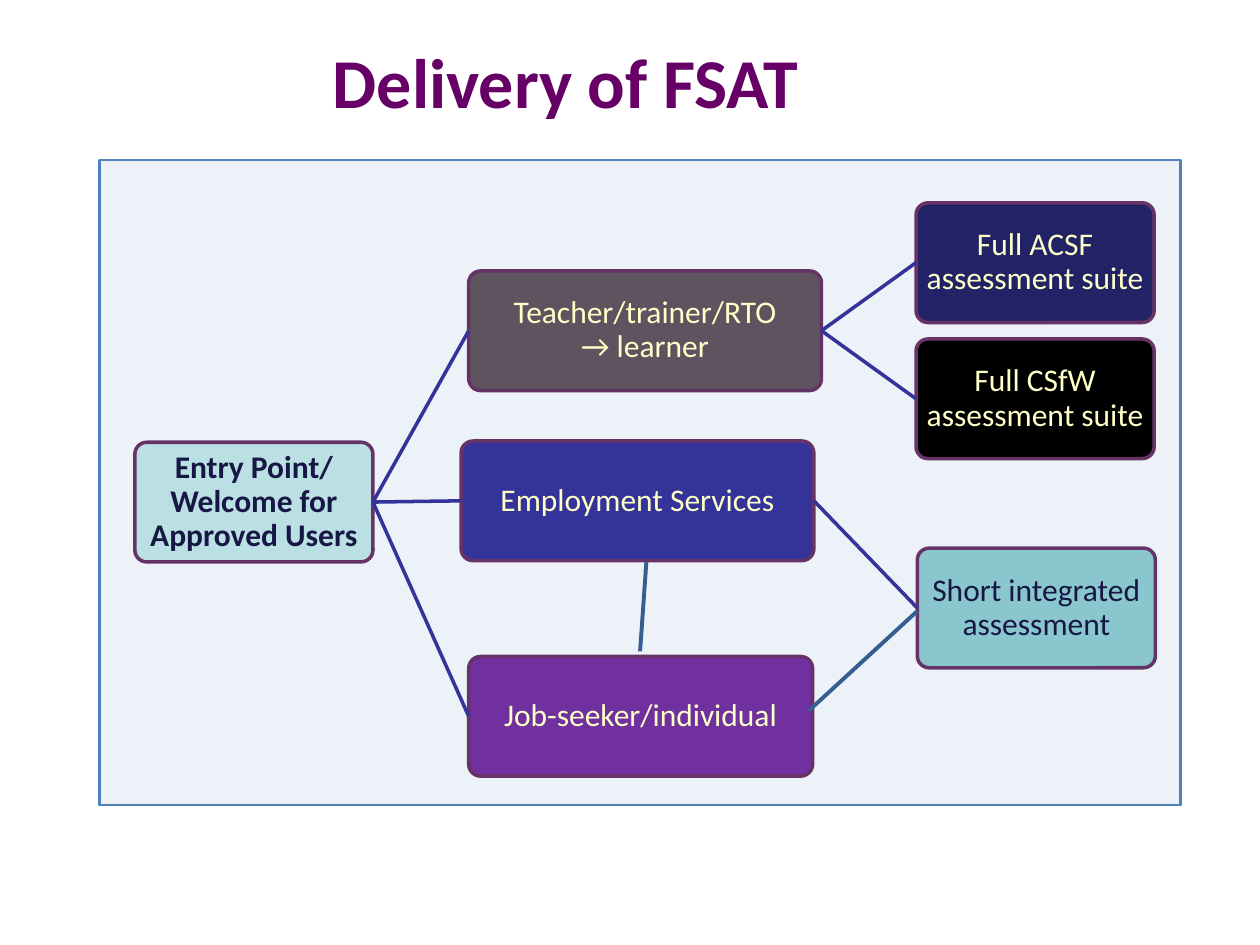
"""Build the FSAT delivery flow slide."""
from dataclasses import dataclass

from lxml import etree
from pptx import Presentation
from pptx.dml.color import RGBColor
from pptx.enum import shapes, text
from pptx.oxml import ns
from pptx.util import Inches, Pt


@dataclass(frozen=True)
class Theme:
    font: str = "Calibri"
    title_size: float = 40
    node_size: float = 18
    title: str = "660066"
    panel: str = "DBE5F1"
    panel_alpha: int = 49
    panel_line: str = "4F81BD"
    node_line: str = "663366"
    link: str = "333399"
    side_link: str = "365F91"
    dark: str = "171745"
    light: str = "FFFFC9"


@dataclass(frozen=True)
class Node:
    label: str
    left: float
    top: float
    width: float
    fill: str
    color: str
    bold: bool = False


THEME = Theme()
NODE_HEIGHT = 0.95
LEFT_SITE, RIGHT_SITE = 1, 3
NODES = {
    "entry": Node("Entry Point/ Welcome for Approved Users", 1.07, 3.51, 1.89, "BBE0E3", THEME.dark, True),
    "teacher": Node("Teacher/trainer/RTO\v→ learner", 3.72, 2.15, 2.8, "605360", THEME.light),
    "acsf": Node("Full ACSF assessment suite", 7.27, 1.61, 1.89, "222267", THEME.light),
    "csfw": Node("Full CSfW assessment suite", 7.27, 2.69, 1.89, "000000", THEME.light),
    "employment": Node("Employment Services", 3.66, 3.5, 2.8, "333399", THEME.light),
    "short": Node("Short integrated assessment", 7.28, 4.35, 1.89, "8AC6CD", THEME.dark),
    "seeker": Node("Job-seeker/individual", 3.72, 5.21, 2.73, "7030A0", THEME.light),
}
LINKS = [
    ("entry", "teacher"), ("entry", "employment"), ("entry", "seeker"),
    ("teacher", "acsf"), ("teacher", "csfw"), ("employment", "short"),
]
SIDE_LINKS = [((6.42, 5.64), (7.28, 4.85)), ((5.08, 5.17), (5.13, 4.46))]


def write(sp, content: str, *, size: float, color: str, bold: bool = False,
          inset: float = 0.04, spacing: float = 1.0) -> None:
    """Put centred, formatted text into a shape."""
    tf = sp.text_frame
    tf.word_wrap = True
    tf.auto_size = text.MSO_AUTO_SIZE.NONE
    tf.vertical_anchor = text.MSO_ANCHOR.MIDDLE
    tf.margin_left = tf.margin_right = tf.margin_top = tf.margin_bottom = Inches(inset)
    p = tf.paragraphs[0]
    p.text = content
    p.alignment = text.PP_ALIGN.CENTER
    p.line_spacing = spacing
    for r in p.runs:
        r.font.name = THEME.font
        r.font.size = Pt(size)
        r.font.bold = bold
        r.font.color.rgb = RGBColor.from_string(color)


def add_box(slide, kind, at: tuple, fill: str, line: str, width: float):
    """Add a filled, outlined shape without a shadow."""
    sp = slide.shapes.add_shape(kind, *map(Inches, at))
    sp.shadow.inherit = False
    sp.fill.solid()
    sp.fill.fore_color.rgb = RGBColor.from_string(fill)
    sp.line.color.rgb = RGBColor.from_string(line)
    sp.line.width = Pt(width)
    return sp


def add_panel(slide) -> None:
    """Add the translucent panel behind the flow."""
    sp = add_box(slide, shapes.MSO_SHAPE.RECTANGLE, (0.79, 1.27, 8.58, 5.12),
                 THEME.panel, THEME.panel_line, 1.5)
    color = sp.fill._xPr.find(".//" + ns.qn("a:srgbClr"))
    etree.SubElement(color, ns.qn("a:alpha"), val=str(THEME.panel_alpha * 1000))


def add_node(slide, node: Node):
    """Add one rounded box with its label."""
    sp = add_box(slide, shapes.MSO_SHAPE.ROUNDED_RECTANGLE,
                 (node.left, node.top, node.width, NODE_HEIGHT), node.fill, THEME.node_line, 2)
    sp.adjustments[0] = 0.1
    write(sp, node.label, size=THEME.node_size, color=node.color, bold=node.bold, spacing=0.9)
    return sp


def add_line(slide, start: tuple, end: tuple, color: str, width: float):
    """Add a straight connector without a shadow."""
    line = slide.shapes.add_connector(shapes.MSO_CONNECTOR.STRAIGHT, *map(Inches, start + end))
    line.line.color.rgb = RGBColor.from_string(color)
    line.line.width = Pt(width)
    etree.SubElement(line._element.spPr, ns.qn("a:effectLst"))
    return line


def main() -> None:
    """Create and save the presentation."""
    prs = Presentation()
    prs.slide_width, prs.slide_height = Inches(10), Inches(7.5)
    slide = prs.slides.add_slide(prs.slide_layouts[5])

    title = slide.shapes.title
    title.left, title.top, title.width, title.height = map(Inches, (0.04, 0.21, 8.9, 0.86))
    write(title, "Delivery of FSAT", size=THEME.title_size, color=THEME.title, bold=True)

    add_panel(slide)
    boxes = {name: add_node(slide, node) for name, node in NODES.items()}
    for source, target in LINKS:
        line = add_line(slide, (0, 0), (1, 1), THEME.link, 2)
        line.begin_connect(boxes[source], RIGHT_SITE)
        line.end_connect(boxes[target], LEFT_SITE)
    for start, end in SIDE_LINKS:
        add_line(slide, start, end, THEME.side_link, 2.25)
    prs.save("out.pptx")


if __name__ == "__main__":
    main()
